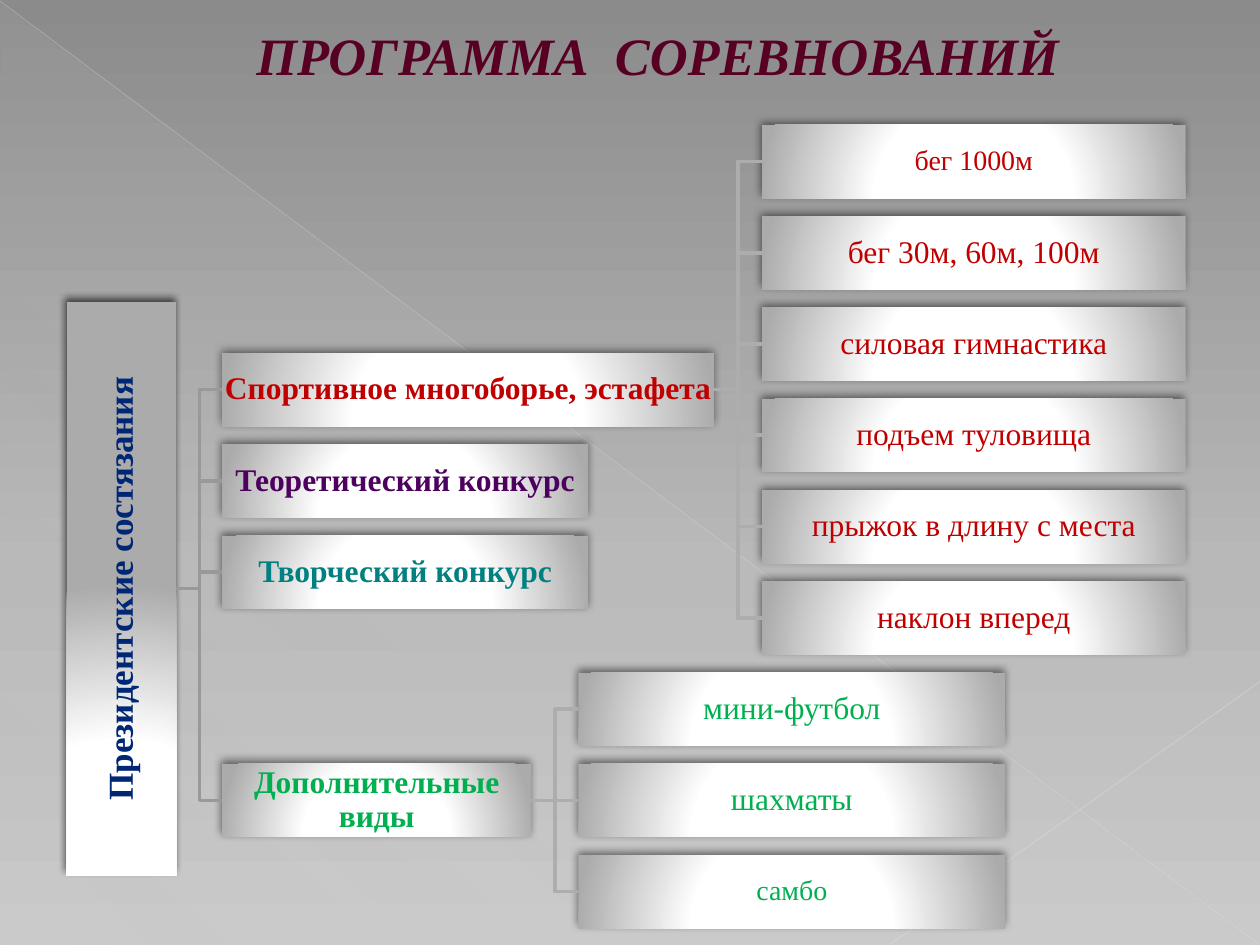
"""Build the competition programme slide as a tree of boxes."""
from pptx import Presentation
from pptx.dml.color import RGBColor
from pptx.enum.shapes import MSO_CONNECTOR, MSO_SHAPE
from pptx.enum.text import MSO_ANCHOR, PP_ALIGN
from pptx.oxml import parse_xml
from pptx.oxml.ns import nsdecls
from pptx.util import Pt

RECT = MSO_SHAPE.RECTANGLE
WEDGE = MSO_SHAPE.RIGHT_TRIANGLE
LINE = MSO_CONNECTOR.STRAIGHT
CENTER = PP_ALIGN.CENTER
MIDDLE = MSO_ANCHOR.MIDDLE
RIGHT, LEFT = 3, 1
FONT = "Times New Roman"

WHITE = RGBColor(0xFF, 0xFF, 0xFF)
BLACK = RGBColor(0x00, 0x00, 0x00)
SILVER = RGBColor(0xAB, 0xAB, 0xAB)
DARK = RGBColor(0x8B, 0x8B, 0x8B)
MID = RGBColor(0xB8, 0xB8, 0xB8)
PALE = RGBColor(0xCA, 0xCA, 0xCA)
MIST = RGBColor(0xD2, 0xD2, 0xD2)
RAY = RGBColor(0xDF, 0xDF, 0xDF)
BEAM = RGBColor(0xE2, 0xE2, 0xE2)
TRUNK = RGBColor(0x99, 0x99, 0x99)
TWIG = RGBColor(0xAD, 0xAD, 0xAD)
WINE = RGBColor(0x57, 0x00, 0x24)
ROSE = RGBColor(0xB1, 0x64, 0x84)
NAVY = RGBColor(0x00, 0x27, 0x76)
RED = RGBColor(0xC0, 0x00, 0x00)
PLUM = RGBColor(0x4E, 0x00, 0x5F)
TEAL = RGBColor(0x00, 0x80, 0x80)
GREEN = RGBColor(0x00, 0xB0, 0x50)

TOP, PITCH, HIGH = 71.4, 52.15, 41.8
ROOT_X, ROOT_Y, ROOT_W, ROOT_H = 69.4, 336.4, 327.6, 62.8
MAIN_X, SPORT_X, EXTRA_X = 127, 435.5, 330.5
SPORT_W, EXTRA_W = 242, 244

MAIN = [
    ("Спортивное многоборье, эстафета", 2.5, 281, RED),
    ("Теоретический конкурс", 3.5, 209, PLUM),
    ("Творческий конкурс", 4.5, 209, TEAL),
    ("Дополнительные виды", 7, 176.5, GREEN),
]
SPORTS = [
    ("бег 1000м", 16),
    ("бег 30м, 60м, 100м", 18),
    ("силовая гимнастика", 18),
    ("подъем туловища", 18),
    ("прыжок в длину с места", 18),
    ("наклон вперед", 18),
]
EXTRAS = [("мини-футбол", 18), ("шахматы", 18), ("самбо", 16)]

SHEEN = ('<a:path path="circle"><a:fillToRect l="50000" t="155000" '
         'r="50000" b="-55000"/></a:path>')


def make_grad(stops, kind):
    """Return gradient XML for (place, colour, opacity) stops."""
    marks = "".join(
        f'<a:gs pos="{place * 1000}"><a:srgbClr val="{color}">'
        f'<a:alpha val="{alpha * 1000}"/></a:srgbClr></a:gs>'
        for place, color, alpha in stops)
    return (f'<a:gradFill {nsdecls("a")} rotWithShape="1">'
            f'<a:gsLst>{marks}</a:gsLst>{kind}</a:gradFill>')


def slant(angle):
    """Return the XML of a linear gradient angle."""
    return f'<a:lin ang="{angle * 60000}" scaled="0"/>'


def set_back(slide):
    """Fill the slide background with a vertical gradient."""
    fill = make_grad([(0, DARK, 100), (60, MID, 100), (100, PALE, 100)],
                     slant(90))
    slide.element.cSld.insert(0, parse_xml(
        f'<p:bg {nsdecls("p")}><p:bgPr>{fill}'
        f'<a:effectLst {nsdecls("a")}/></p:bgPr></p:bg>'))


def add_form(slide, kind, x, y, w, h, fill):
    """Add a borderless preset shape with a gradient."""
    form = slide.shapes.add_shape(kind, Pt(x), Pt(y), Pt(w), Pt(h))
    form.element.spPr.insert(2, parse_xml(fill))
    form.line.fill.background()
    form.shadow.inherit = False
    return form


def add_line(slide, x1, y1, x2, y2, color, width):
    """Add a straight line without a shadow."""
    line = slide.shapes.add_connector(LINE, Pt(x1), Pt(y1), Pt(x2), Pt(y2))
    line.line.color.rgb = color
    line.line.width = Pt(width)
    line.element.spPr.append(parse_xml(f'<a:effectLst {nsdecls("a")}/>'))
    return line


def add_ray(slide, ends, color, width, alpha):
    """Add a thin translucent line."""
    ray = add_line(slide, *ends, color, width)
    tint = ray.element.spPr.xpath("a:ln//a:srgbClr")[0]
    tint.append(parse_xml(
        f'<a:alpha {nsdecls("a")} val="{alpha * 1000}"/>'))


def add_run(para, text, size, color, bold):
    """Add one run of styled text."""
    run = para.add_run()
    run.text = text
    run.font.name = FONT
    run.font.size = Pt(size)
    run.font.bold = bold
    run.font.color.rgb = color
    return run


def add_title(slide, text):
    """Add the outlined italic heading."""
    box = slide.shapes.add_textbox(Pt(33), Pt(-8.6), Pt(648), Pt(80))
    frame = box.text_frame
    frame.word_wrap = True
    frame.vertical_anchor = MIDDLE
    para = frame.paragraphs[0]
    para.alignment = CENTER
    para._p.get_or_add_pPr().set("marL", str(Pt(38)))
    run = add_run(para, text, 30, WINE, True)
    run.font.italic = True
    run.font._element.insert(0, parse_xml(
        f'<a:ln {nsdecls("a")} w="{Pt(0.5)}"><a:solidFill>'
        f'<a:srgbClr val="{ROSE}"/></a:solidFill></a:ln>'))


def add_box(slide, x, y, w, h, text, size, color, bold=False,
            shade=(50, 5, 2)):
    """Add a shaded box with a centred label."""
    fill = make_grad([(0, WHITE, 100), (46, WHITE, 100), (100, SILVER, 100)],
                     SHEEN)
    box = add_form(slide, RECT, x, y, w, h, fill)
    alpha, blur, dist = shade
    box.element.spPr.xpath("a:effectLst")[0].append(parse_xml(
        f'<a:outerShdw {nsdecls("a")} blurRad="{Pt(blur)}" '
        f'dist="{Pt(dist)}" dir="{245 * 60000}" rotWithShape="0">'
        f'<a:srgbClr val="{BLACK}"><a:alpha val="{alpha * 1000}"/>'
        '</a:srgbClr></a:outerShdw>'))
    frame = box.text_frame
    frame.word_wrap = True
    frame.vertical_anchor = MIDDLE
    frame.margin_left = frame.margin_right = Pt(0.8)
    frame.margin_top = frame.margin_bottom = Pt(0.8)
    para = frame.paragraphs[0]
    para.alignment = CENTER
    para.line_spacing = 0.9
    add_run(para, text, size, color, bold)
    return box


def add_link(slide, x, y, box, color):
    """Add an elbow from a point to the left side of a box."""
    end = box.top + box.height // 2
    turn = (Pt(x) + box.left) // 2
    pen = slide.shapes.build_freeform(Pt(x), Pt(y))
    pen.add_line_segments([(turn, Pt(y)), (turn, end), (box.left, end)],
                          close=False)
    link = pen.convert_to_shape()
    link.fill.background()
    link.line.color.rgb = color
    link.line.width = Pt(2)
    link.shadow.inherit = False


def add_leaves(slide, stem, items, x, w, row, color):
    """Add a column of leaf boxes and join them to their stem."""
    edge = (stem.left + stem.width).pt if hasattr(stem.left + stem.width, "pt") \
        else (stem.left + stem.width) / Pt(1)
    mid = (stem.top + stem.height / 2) / Pt(1)
    for step, (text, size) in enumerate(items):
        y = TOP + PITCH * (row + step)
        leaf = add_box(slide, x, y, w, HIGH, text, size, color)
        if leaf.top == stem.top:
            link = add_line(slide, edge, mid, x, mid, TWIG, 2)
            link.begin_connect(stem, RIGHT)
            link.end_connect(leaf, LEFT)
        else:
            add_link(slide, edge, mid, leaf, TWIG)


def main():
    """Build and save the slide."""
    deck = Presentation()
    deck.slide_width, deck.slide_height = Pt(720), Pt(540)
    slide = deck.slides.add_slide(deck.slide_layouts[6])
    set_back(slide)
    haze = make_grad([(0, MIST, 10), (70, MIST, 8), (100, MIST, 1)],
                     slant(133))
    add_form(slide, WEDGE, 0.5, 1.1, 719.5, 538.9, haze)
    add_ray(slide, (0, 0.5, 719.5, 539.5), RAY, 0.39, 35)
    add_ray(slide, (720, 389.5, 509, 539.5), BEAM, 0.47, 45)
    add_title(slide, "ПРОГРАММА  СОРЕВНОВАНИЙ")
    root = add_box(slide, ROOT_X - ROOT_W / 2, ROOT_Y - ROOT_H / 2, ROOT_W,
                   ROOT_H, "Президентские состязания", 20, NAVY, True,
                   (60, 4, 3))
    root.rotation = 270
    stems = []
    for text, row, w, color in MAIN:
        stem = add_box(slide, MAIN_X, TOP + PITCH * row, w, HIGH, text, 18,
                       color, True)
        add_link(slide, ROOT_X + ROOT_H / 2, ROOT_Y, stem, TRUNK)
        stems.append(stem)
    add_leaves(slide, stems[0], SPORTS, SPORT_X, SPORT_W, 0, RED)
    add_leaves(slide, stems[-1], EXTRAS, EXTRA_X, EXTRA_W, 6, GREEN)
    deck.save("out.pptx")


if __name__ == "__main__":
    main()
